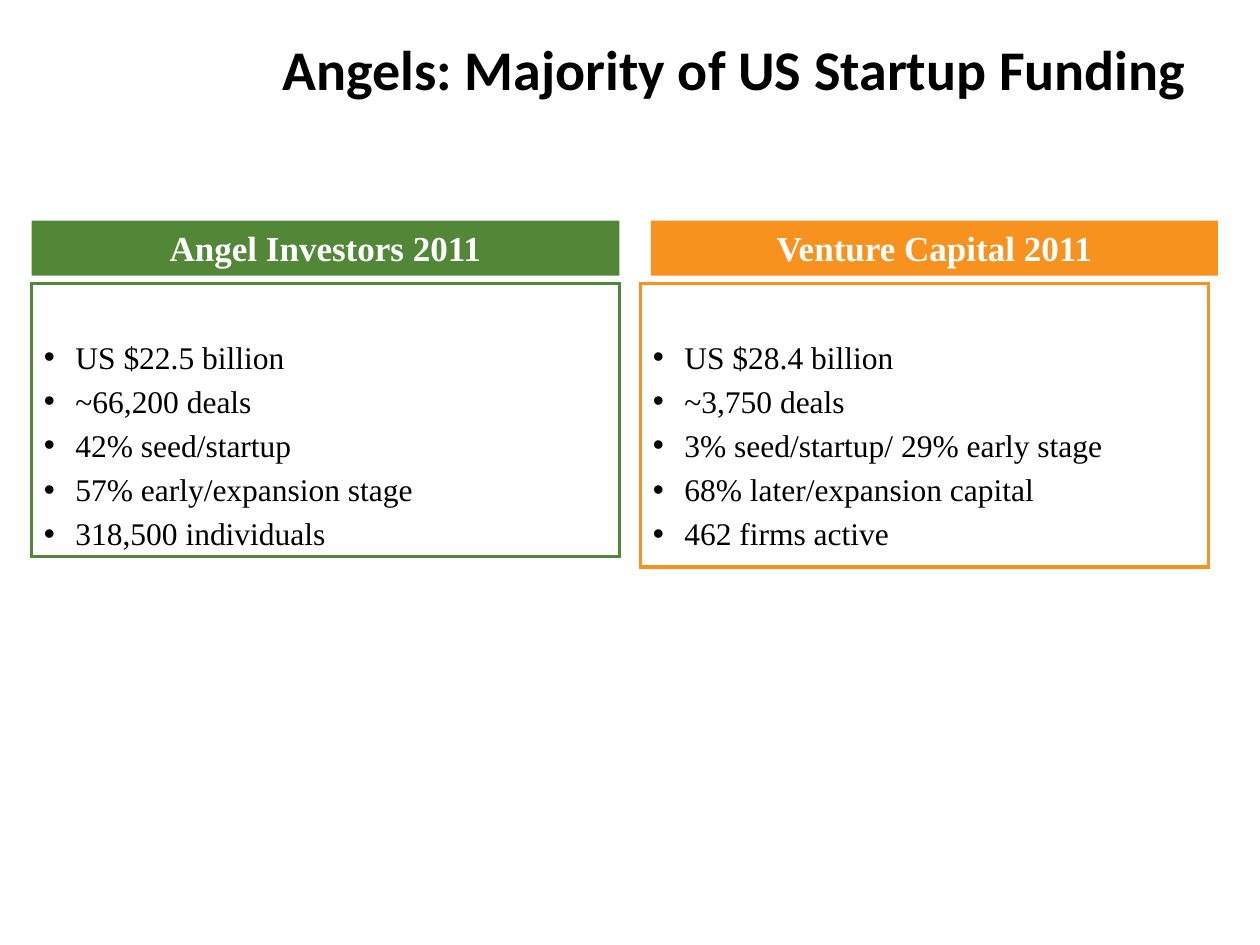
from lxml.etree import SubElement
from pptx import Presentation
from pptx.dml.color import RGBColor
from pptx.enum.shapes import MSO_SHAPE
from pptx.enum.text import MSO_ANCHOR, PP_ALIGN
from pptx.oxml.ns import qn
from pptx.util import Pt

GREEN = RGBColor(0x53, 0x87, 0x38)
ORANGE = RGBColor(0xF7, 0x92, 0x1E)
BLACK = RGBColor(0, 0, 0)
WHITE = RGBColor(255, 255, 255)
SERIF = "Times New Roman"


def add_text(paragraph, text, size, color, font=SERIF, bold=False):
    run = paragraph.add_run()
    run.text = text
    run.font.name = font
    run.font.size = Pt(size)
    run.font.bold = bold
    run.font.color.rgb = color


def add_bullet(paragraph, indent):
    properties = paragraph._p.get_or_add_pPr()
    properties.set("marL", str(Pt(indent)))
    properties.set("indent", str(-Pt(indent)))
    SubElement(properties, qn("a:buFont"), typeface="Arial")
    SubElement(properties, qn("a:buChar"), char="•")


def add_title(slide, left, top, width, height, text):
    title = slide.shapes.add_textbox(Pt(left), Pt(top), Pt(width), Pt(height))
    frame = title.text_frame
    frame.word_wrap = True
    frame.vertical_anchor = MSO_ANCHOR.MIDDLE
    frame.paragraphs[0].alignment = PP_ALIGN.CENTER
    add_text(frame.paragraphs[0], text, 32, BLACK, "Calibri", True)


def add_box(slide, left, top, width, height, top_margin):
    box = slide.shapes.add_shape(
        MSO_SHAPE.RECTANGLE, Pt(left), Pt(top), Pt(width), Pt(height))
    box.shadow.inherit = False
    frame = box.text_frame
    frame.word_wrap = True
    frame.vertical_anchor = MSO_ANCHOR.TOP
    frame.margin_top = Pt(top_margin)
    return box


def add_heading(slide, left, top, width, height, text, color):
    heading = add_box(slide, left, top, width, height, 3.6)
    heading.fill.solid()
    heading.fill.fore_color.rgb = color
    heading.line.fill.background()
    paragraph = heading.text_frame.paragraphs[0]
    paragraph.alignment = PP_ALIGN.CENTER
    add_text(paragraph, text, 20, WHITE, bold=True)


def add_facts(slide, left, top, width, height, facts, color):
    panel = add_box(slide, left, top, width, height, 31.1)
    panel.fill.background()
    panel.line.color.rgb = color
    panel.line.width = Pt(2)
    # Square corners on the border
    SubElement(panel.line._get_or_add_ln(), qn("a:miter"), lim="800000")
    frame = panel.text_frame
    for index, fact in enumerate(facts):
        paragraph = frame.add_paragraph() if index else frame.paragraphs[0]
        paragraph.alignment = PP_ALIGN.LEFT
        paragraph.space_before = Pt(3.6 if index else 0)
        add_bullet(paragraph, 18)
        add_text(paragraph, fact, 18, BLACK)


def main():
    presentation = Presentation()
    presentation.slide_width, presentation.slide_height = Pt(720), Pt(540)
    slide = presentation.slides.add_slide(presentation.slide_layouts[6])

    add_title(slide, 139, 8.8, 561.6, 60, "Angels: Majority of US Startup Funding")

    # Angel investors
    add_facts(slide, 18, 162, 336, 156, [
        "US $22.5 billion", "~66,200 deals", "42% seed/startup",
        "57% early/expansion stage", "318,500 individuals"], GREEN)
    add_heading(slide, 18, 126, 336, 31.5, "Angel Investors 2011", GREEN)

    # Venture capital
    add_facts(slide, 366, 162, 324.5, 162, [
        "US $28.4 billion", "~3,750 deals", "3% seed/startup/ 29% early stage",
        "68% later/expansion capital", "462 firms active"], ORANGE)
    add_heading(slide, 372, 126, 324, 31.5, "Venture Capital 2011", ORANGE)

    presentation.save("out.pptx")


if __name__ == "__main__":
    main()
